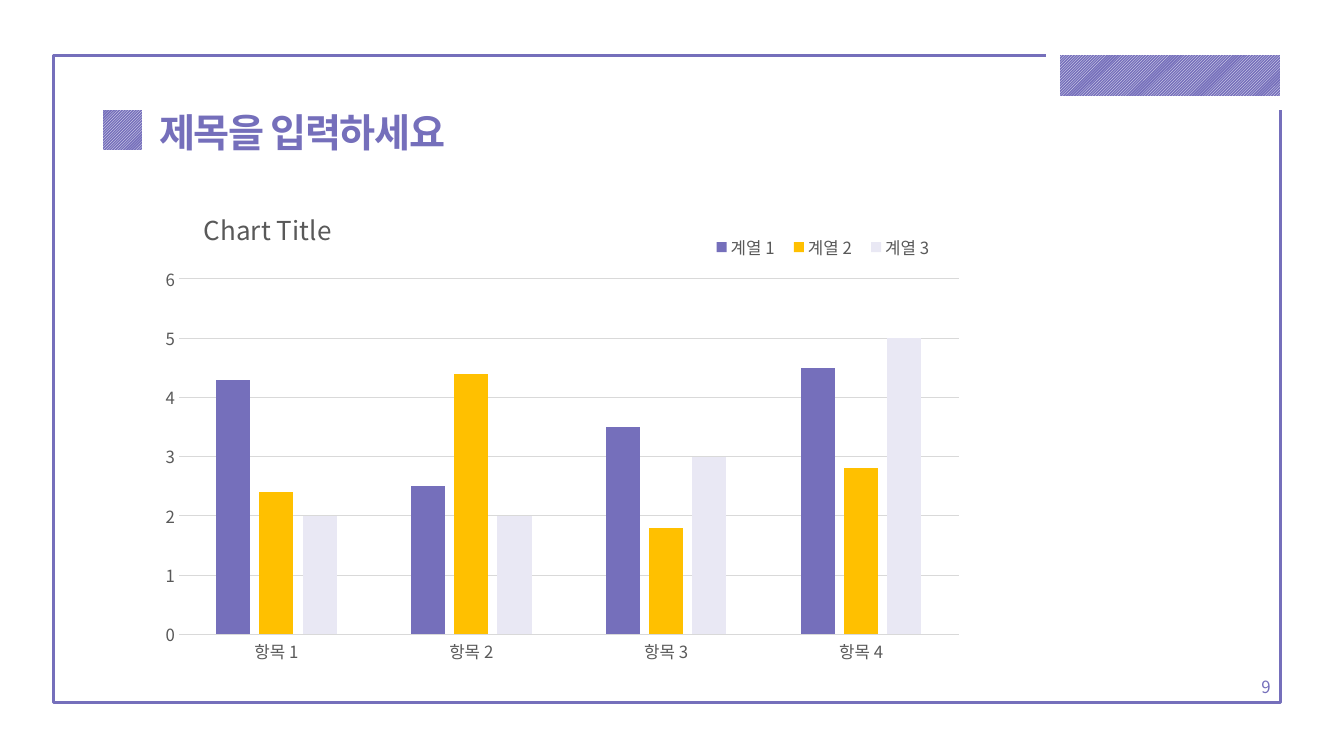
"""Builds a slide with a framed border, a heading and a clustered column chart."""
import dataclasses

import pptx
import pptx.chart.data
import pptx.dml.color
import pptx.enum.chart
import pptx.enum.dml
import pptx.enum.shapes
import pptx.enum.text
import pptx.oxml
import pptx.oxml.ns
import pptx.util

Inches = pptx.util.Inches
Pt = pptx.util.Pt
qn = pptx.oxml.ns.qn


@dataclasses.dataclass(frozen=True)
class Theme:
    """Colours, font and type sizes of the slide."""
    font: str = "Noto Sans CJK KR"
    accent: str = "756FBB"
    highlight: str = "FFC000"
    pale: str = "E9E8F4"
    background: str = "FFFFFF"
    label: str = "595959"
    grid: str = "D9D9D9"
    heading_size: float = 28
    chart_title_size: float = 18.6
    label_size: float = 12


def colour(value):
    """Return an RGB colour from its hexadecimal form."""
    return pptx.dml.color.RGBColor.from_string(value)


def style_font(font, name, size, color, bold=False):
    """Set typeface, size, colour and weight of a font."""
    font.name, font.size, font.bold = name, Pt(size), bold
    font.color.rgb = colour(color)


def style_line(line, color, width):
    """Set colour and width of a line."""
    line.color.rgb = colour(color)
    line.width = Pt(width)


def write_text(frame, text, *, font, size, color, bold=False, align=None, spacing=None):
    """Write one formatted run into the first paragraph of a text frame."""
    paragraph = frame.paragraphs[0]
    paragraph.alignment = align
    run = paragraph.add_run()
    run.text = text
    style_font(run.font, font, size, color, bold)
    if spacing is not None:
        run.font._element.set("spc", str(int(spacing * 100)))


def place_in_chart(element, inner=False, **fractions):
    """Give a chart part a manual layout in fractions of the chart area."""
    existing = element.find(qn("c:layout"))
    if existing is not None:
        element.remove(existing)
    target = '<c:layoutTarget val="inner"/>' if inner else ""
    modes = "".join(f'<c:{key}Mode val="edge"/>' for key in "xy")
    values = "".join(f'<c:{key} val="{value}"/>' for key, value in fractions.items())
    layout = pptx.oxml.parse_xml(
        f'<c:layout {pptx.oxml.ns.nsdecls("c")}><c:manualLayout>'
        f"{target}{modes}{values}</c:manualLayout></c:layout>")
    overlay = element.find(qn("c:overlay"))
    if overlay is None:
        element.insert(0, layout)
    else:
        overlay.addprevious(layout)


def use_font_for_korean(element):
    """Repeat each Latin typeface as the East Asian typeface."""
    for latin in list(element.iter(qn("a:latin"))):
        east_asian = latin.makeelement(qn("a:ea"), {"typeface": latin.get("typeface")})
        latin.addnext(east_asian)


class SlideBuilder:
    """Holds the theme and the current slide."""

    def __init__(self, slide, theme):
        self.slide = slide
        self.theme = theme

    def rectangle(self, left, top, width, height, line, line_width, hatched=False):
        """Add an outlined rectangle, either empty or hatched."""
        shape = self.slide.shapes.add_shape(
            pptx.enum.shapes.MSO_SHAPE.RECTANGLE,
            Inches(left), Inches(top), Inches(width), Inches(height))
        shape.shadow.inherit = False
        style_line(shape.line, line, line_width)
        if hatched:
            shape.fill.patterned()
            shape.fill.pattern = pptx.enum.dml.MSO_PATTERN.DARK_UPWARD_DIAGONAL
            shape.fill.fore_color.rgb = colour(self.theme.background)
            shape.fill.back_color.rgb = colour(self.theme.accent)
        else:
            shape.fill.background()

    def text(self, content, left, top, width, height, wrap=True, anchor=None, **style):
        """Add a text box in the accent colour."""
        box = self.slide.shapes.add_textbox(
            Inches(left), Inches(top), Inches(width), Inches(height))
        box.text_frame.word_wrap = wrap
        box.text_frame.vertical_anchor = anchor
        write_text(box.text_frame, content, font=self.theme.font,
                   color=self.theme.accent, **style)

    def column_chart(self, title, categories, series, left, top, width, height):
        """Add a column chart whose series map a name to values and a colour."""
        theme = self.theme
        label_style = (theme.font, theme.label_size, theme.label)
        data = pptx.chart.data.CategoryChartData()
        data.categories = categories
        for name, (values, _) in series.items():
            data.add_series(name, values)
        chart = self.slide.shapes.add_chart(
            pptx.enum.chart.XL_CHART_TYPE.COLUMN_CLUSTERED,
            Inches(left), Inches(top), Inches(width), Inches(height), data).chart
        style_font(chart.font, *label_style)

        plot = chart.plots[0]
        plot.gap_width, plot.overlap, plot.vary_by_categories = 219, -27, False
        for column, (_, color) in zip(plot.series, series.values()):
            column.format.fill.solid()
            column.format.fill.fore_color.rgb = colour(color)

        for axis in (chart.category_axis, chart.value_axis):
            axis.major_tick_mark = pptx.enum.chart.XL_TICK_MARK.NONE
            axis.minor_tick_mark = pptx.enum.chart.XL_TICK_MARK.NONE
            style_font(axis.tick_labels.font, *label_style)
        style_line(chart.category_axis.format.line, theme.grid, 0.75)
        value_axis = chart.value_axis
        value_axis.format.line.fill.background()
        value_axis.minimum_scale, value_axis.maximum_scale = 0, 6
        value_axis.major_unit = 1
        style_line(value_axis.major_gridlines.format.line, theme.grid, 0.75)

        chart.has_title = True
        chart.chart_title.include_in_layout = False
        write_text(chart.chart_title.text_frame, title, font=theme.font,
                   size=theme.chart_title_size, color=theme.label)
        chart.has_legend = True
        chart.legend.position = pptx.enum.chart.XL_LEGEND_POSITION.BOTTOM
        chart.legend.include_in_layout = False
        style_font(chart.legend.font, *label_style)

        root = chart.element
        place_in_chart(next(root.iter(qn("c:title"))), x=0.06, y=0.03)
        place_in_chart(next(root.iter(qn("c:legend"))), x=0.67, y=0.09, w=0.29, h=0.05)
        place_in_chart(next(root.iter(qn("c:plotArea"))), inner=True,
                       x=0.036, y=0.175, w=0.943, h=0.673)
        use_font_for_korean(root)


def main():
    """Build the slide and save it."""
    presentation = pptx.Presentation()
    presentation.slide_width, presentation.slide_height = Inches(13.33), Inches(7.5)
    slide = presentation.slides.add_slide(presentation.slide_layouts[6])
    theme = Theme()
    builder = SlideBuilder(slide, theme)

    builder.rectangle(0.53, 0.55, 12.17, 6.42, theme.accent, 2.5)
    builder.rectangle(10.44, 0.48, 2.32, 0.54, theme.background, 10, hatched=True)
    builder.text("제목을 입력하세요", 1.48, 1.03, 3.15, 0.57, wrap=False,
                 size=theme.heading_size, bold=True, spacing=-1)
    builder.rectangle(0.95, 1.02, 0.53, 0.54, theme.background, 10, hatched=True)
    builder.text("9", 12.22, 6.61, 0.48, 0.4, size=theme.label_size,
                 anchor=pptx.enum.text.MSO_ANCHOR.MIDDLE,
                 align=pptx.enum.text.PP_ALIGN.RIGHT)
    use_font_for_korean(slide.element)
    builder.column_chart(
        "Chart Title",
        [f"항목 {number}" for number in range(1, 5)],
        {"계열 1": ((4.3, 2.5, 3.5, 4.5), theme.accent),
         "계열 2": ((2.4, 4.4, 1.8, 2.8), theme.highlight),
         "계열 3": ((2, 2, 3, 5), theme.pale)},
        1.48, 1.85, 8.2, 5.24)
    presentation.save("out.pptx")


if __name__ == "__main__":
    main()
